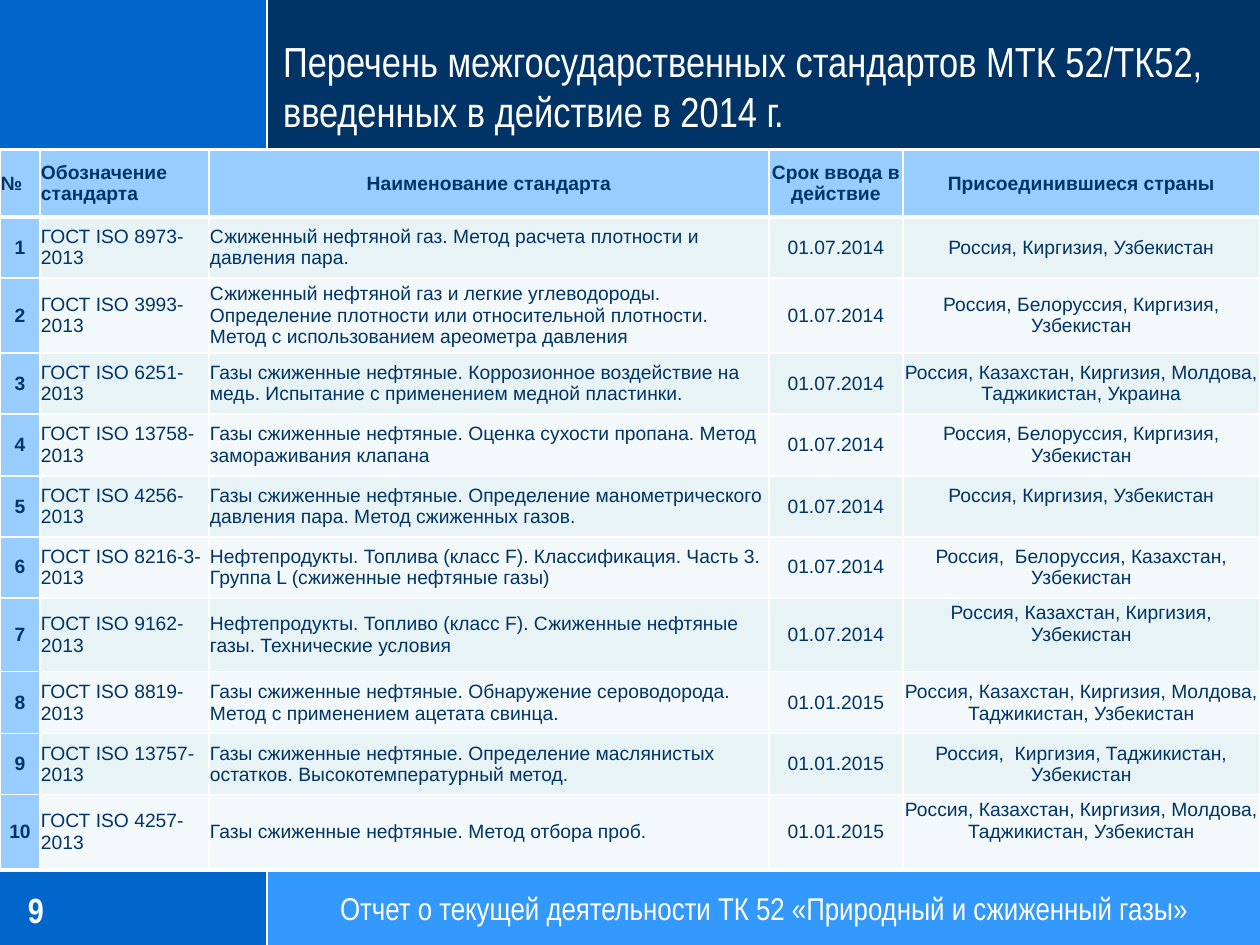
"""Build the slide listing the interstate standards put into force in 2014."""
from dataclasses import dataclass

from lxml.etree import SubElement
from pptx import Presentation
from pptx.dml.color import RGBColor
from pptx.enum.shapes import MSO_CONNECTOR, MSO_SHAPE
from pptx.enum.text import MSO_ANCHOR, MSO_AUTO_SIZE, PP_ALIGN
from pptx.oxml.ns import qn
from pptx.util import Pt


@dataclass(frozen=True)
class Theme:
    white: str = "FFFFFF"
    navy: str = "003366"
    blue: str = "0066CC"
    sky: str = "3399FF"
    head: str = "99CCFF"
    bands: tuple = ("E7F3F4", "F3F9FA")
    narrow: str = "Arial Narrow"
    sans: str = "Arial"
    title: int = 24
    page: int = 20
    foot: int = 18
    cell: int = 11
    rule: float = 1.25
    grid: int = 1
    thick: int = 3


THEME = Theme()
TITLE = "Перечень межгосударственных стандартов МТК 52/ТК52, введенных в действие в 2014 г."
PAGE = "9"
FOOTER = "Отчет о текущей деятельности ТК 52 «Природный и сжиженный газы»"
HEADER = ("№", "Обозначение стандарта", "Наименование стандарта",
          "Срок ввода в действие", "Присоединившиеся страны")
ROWS = [
    ("8973", "Сжиженный нефтяной газ. Метод расчета плотности и давления пара.",
     "01.07.2014", "Россия, Киргизия, Узбекистан"),
    ("3993", "Сжиженный нефтяной газ и легкие углеводороды. Определение плотности или "
     "относительной плотности. Метод с использованием ареометра давления",
     "01.07.2014", "Россия, Белоруссия, Киргизия, Узбекистан"),
    ("6251", "Газы сжиженные нефтяные. Коррозионное воздействие на медь. "
     "Испытание с применением медной пластинки.",
     "01.07.2014", "Россия, Казахстан, Киргизия, Молдова, Таджикистан, Украина"),
    ("13758", "Газы сжиженные нефтяные. Оценка сухости пропана. Метод замораживания клапана",
     "01.07.2014", "Россия, Белоруссия, Киргизия, Узбекистан"),
    ("4256", "Газы сжиженные нефтяные. Определение манометрического давления пара. "
     "Метод сжиженных газов.",
     "01.07.2014", "Россия, Киргизия, Узбекистан"),
    ("8216-3", "Нефтепродукты. Топлива (класс F). Классификация. Часть 3. "
     "Группа L (сжиженные нефтяные газы)",
     "01.07.2014", "Россия,  Белоруссия, Казахстан, Узбекистан"),
    ("9162", "Нефтепродукты. Топливо (класс F). Сжиженные нефтяные газы. Технические условия",
     "01.07.2014", "Россия, Казахстан, Киргизия, Узбекистан"),
    ("8819", "Газы сжиженные нефтяные. Обнаружение сероводорода. "
     "Метод с применением ацетата свинца.",
     "01.01.2015", "Россия, Казахстан, Киргизия, Молдова, Таджикистан, Узбекистан"),
    ("13757", "Газы сжиженные нефтяные. Определение маслянистых остатков. "
     "Высокотемпературный метод.",
     "01.01.2015", "Россия,  Киргизия, Таджикистан, Узбекистан"),
    ("4257", "Газы сжиженные нефтяные. Метод отбора проб.",
     "01.01.2015", "Россия, Казахстан, Киргизия, Молдова, Таджикистан, Узбекистан"),
]
RAISED = (5, 7, 10)
LIFT = 22
WIDE, HIGH = 1260, 945
SPLIT, TOP, BASE = 267, 149, 871
COLS = (40, 169, 560, 134, 357)
TALLS = (67, 61, 75, 61, 62, 61, 61, 74, 62, 61, 74)
BARS = [
    (0, BASE, SPLIT, HIGH - BASE, THEME.blue),
    (SPLIT, BASE, WIDE - SPLIT, HIGH - BASE, THEME.sky),
    (0, 0, SPLIT, TOP, THEME.blue),
    (SPLIT, 0, WIDE - SPLIT, TOP, THEME.navy),
]
RULES = [
    (SPLIT, BASE, SPLIT, HIGH),
    (SPLIT, 0, SPLIT, TOP),
    (0, BASE, WIDE, BASE),
    (0, TOP, WIDE, TOP),
]


def px(*sizes):
    return [round(size * 914400 / 126) for size in sizes]


def style(para, font, size, color, bold=False, align=PP_ALIGN.LEFT):
    para.alignment = align
    for run in para.runs:
        run.font.name, run.font.size, run.font.bold = font, Pt(size), bold
        run.font.color.rgb = RGBColor.from_string(color)


def write(shape, text, size, anchor, **looks):
    frame = shape.text_frame
    frame.text = text
    frame.word_wrap = True
    frame.auto_size = MSO_AUTO_SIZE.NONE
    frame.vertical_anchor = anchor
    frame.margin_left = frame.margin_right = frame.margin_top = frame.margin_bottom = 0
    style(frame.paragraphs[0], THEME.narrow, size, THEME.white, **looks)


def add_bar(shapes, left, top, wide, high, color):
    bar = shapes.add_shape(MSO_SHAPE.RECTANGLE, *px(left, top, wide, high))
    bar.shadow.inherit = False
    bar.fill.solid()
    bar.fill.fore_color.rgb = RGBColor.from_string(color)
    bar.line.fill.background()


def add_rule(shapes, *ends):
    rule = shapes.add_connector(MSO_CONNECTOR.STRAIGHT, *px(*ends))
    rule.line.color.rgb = RGBColor.from_string(THEME.white)
    rule.line.width = Pt(THEME.rule)
    SubElement(rule._element.spPr, qn("a:effectLst"))


def edge(cell, row):
    props = cell._tc.get_or_add_tcPr()
    heavy = {(0, "B"), (1, "T")}
    for side in "LRTB":
        size = THEME.thick if (row, side) in heavy else THEME.grid
        line = SubElement(props, qn(f"a:ln{side}"), w=str(Pt(size)))
        SubElement(SubElement(line, qn("a:solidFill")), qn("a:srgbClr"), val=THEME.white)


def fill_cell(cell, text, row, col):
    head = row == 0 or col == 0
    left = col in (1, 2) and row > 0 or col < 2 and row == 0
    cell.text = text
    cell.vertical_anchor = MSO_ANCHOR.MIDDLE
    cell.margin_left = cell.margin_right = px(1)[0]
    cell.margin_top = 0
    cell.margin_bottom = px(LIFT)[0] if col == 4 and row in RAISED else 0
    edge(cell, row)
    cell.fill.solid()
    color = THEME.head if head else THEME.bands[(row - 1) % 2]
    cell.fill.fore_color.rgb = RGBColor.from_string(color)
    style(cell.text_frame.paragraphs[0], THEME.sans, THEME.cell, THEME.navy,
          head, PP_ALIGN.LEFT if left else PP_ALIGN.CENTER)


def add_grid(shapes):
    lines = [HEADER] + [(str(num), f"ГОСТ ISO {code}-2013", *rest)
                        for num, (code, *rest) in enumerate(ROWS, 1)]
    grid = shapes.add_table(len(lines), len(COLS),
                            *px(0, TOP + 1, sum(COLS), sum(TALLS))).table
    for col, wide in zip(grid.columns, px(*COLS)):
        col.width = wide
    for row, high in zip(grid.rows, px(*TALLS)):
        row.height = high
    for row, line in enumerate(lines):
        for col, text in enumerate(line):
            fill_cell(grid.cell(row, col), text, row, col)


def main():
    deck = Presentation()
    deck.slide_width, deck.slide_height = px(WIDE, HIGH)
    slide = deck.slides.add_slide(deck.slide_layouts[5])
    shapes = slide.shapes
    for bar in BARS:
        add_bar(shapes, *bar)
    for rule in RULES:
        add_rule(shapes, *rule)
    title = shapes.title
    title.left, title.top, title.width, title.height = px(283, 33, 977, 103)
    write(title, TITLE, THEME.title, MSO_ANCHOR.BOTTOM)
    shapes._spTree.append(title._element)
    page = shapes.add_textbox(*px(28, 877, 205, 66))
    write(page, PAGE, THEME.page, MSO_ANCHOR.MIDDLE, bold=True)
    foot = shapes.add_textbox(*px(SPLIT + 1, BASE, WIDE - SPLIT - 1, HIGH - BASE))
    write(foot, FOOTER, THEME.foot, MSO_ANCHOR.MIDDLE, align=PP_ALIGN.CENTER)
    add_grid(shapes)
    deck.save("out.pptx")


if __name__ == "__main__":
    main()
